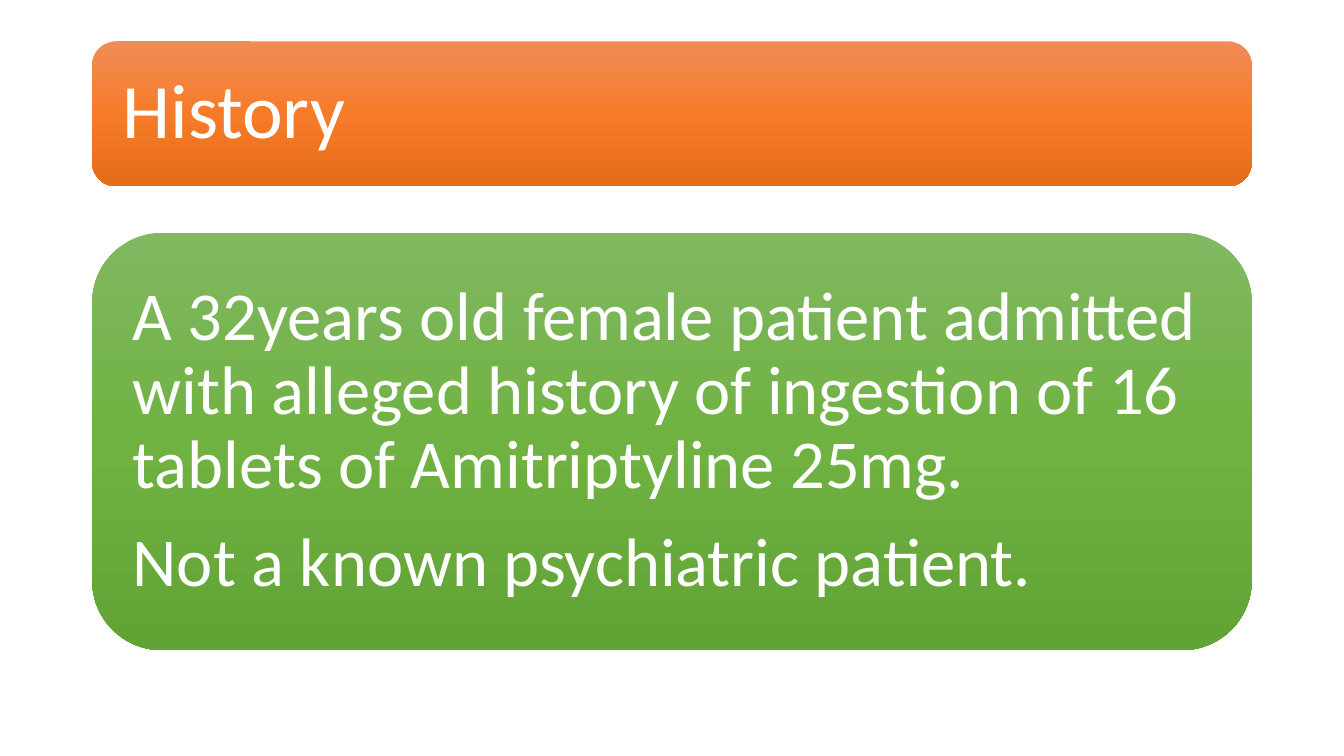
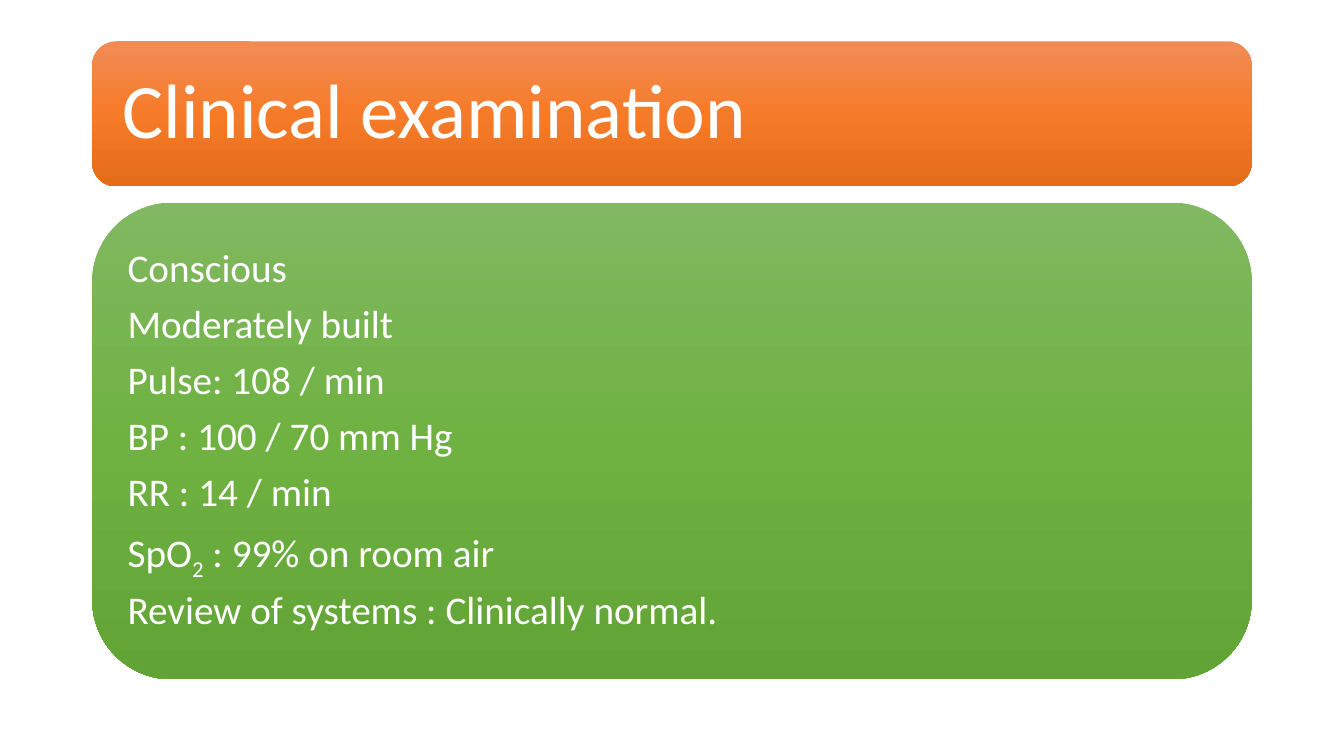
import copy
from dataclasses import dataclass

import pptx
import pptx.dml.color
import pptx.enum.shapes
import pptx.enum.text
import pptx.oxml.ns
import pptx.util

Inches = pptx.util.Inches
Pt = pptx.util.Pt


@dataclass(frozen=True)
class Theme:
    font: str = "Calibri"
    text_color: str = "FFFFFF"
    title_gradient: tuple = ("F18C57", "F67B28", "E56C19")
    body_gradient: tuple = ("81B861", "6FB242", "62A336")
    title_size: float = 55
    history_size: float = 49
    findings_size: float = 28
    line_spacing: float = 0.9
    space_after: float = 0.35  # share of the type size
    page_width: float = 13.33
    page_height: float = 7.5
    panel_width: float = 11.5


THEME = Theme()


def rgb(color):
    return pptx.dml.color.RGBColor.from_string(color)


# Vertical gradient with evenly spaced stops
def fill_gradient(shape, colors):
    fill = shape.fill
    fill.gradient()
    fill.gradient_angle = 270
    stop_list = shape._element.spPr.find(".//" + pptx.oxml.ns.qn("a:gsLst"))
    while len(stop_list) < len(colors):
        stop_list.append(copy.deepcopy(stop_list[0]))
    for index, (stop, color) in enumerate(zip(fill.gradient_stops, colors)):
        stop.position = index / (len(colors) - 1)
        stop.color.rgb = rgb(color)


# A paragraph is a list of spans; every second span is a subscript
def add_spans(para, spans, size):
    para.alignment = pptx.enum.text.PP_ALIGN.LEFT
    para.line_spacing = THEME.line_spacing
    para.space_after = Pt(size * THEME.space_after)
    for index, text in enumerate(spans):
        span = para.add_run()
        span.text = text
        span.font.name = THEME.font
        span.font.size = Pt(size)
        span.font.color.rgb = rgb(THEME.text_color)
        if index % 2:
            span.font._element.set("baseline", "-25000")


# Centred rounded panel; its corners add to the text inset
def add_panel(page, top, height, colors, paragraphs, size, inset):
    left = (THEME.page_width - THEME.panel_width) / 2
    panel = page.shapes.add_shape(
        pptx.enum.shapes.MSO_SHAPE.ROUNDED_RECTANGLE,
        Inches(left), Inches(top), Inches(THEME.panel_width), Inches(height))
    panel.shadow.inherit = False
    panel.line.fill.background()
    fill_gradient(panel, colors)
    frame = panel.text_frame
    frame.word_wrap = True
    frame.vertical_anchor = pptx.enum.text.MSO_ANCHOR.MIDDLE
    frame.margin_left = frame.margin_right = Inches(inset)
    frame.margin_top = frame.margin_bottom = Inches(inset)
    for index, spans in enumerate(paragraphs):
        para = frame.add_paragraph() if index else frame.paragraphs[0]
        add_spans(para, spans, size)


# Title band and body panel of one slide
def add_page(deck, title, paragraphs, top, height, size, inset):
    page = deck.slides.add_slide(deck.slide_layouts[6])
    add_panel(page, 0.41, 1.44, THEME.title_gradient, [[title]],
              THEME.title_size, 0.23)
    add_panel(page, top, height, THEME.body_gradient, paragraphs, size, inset)


def main():
    deck = pptx.Presentation()
    deck.slide_width = Inches(THEME.page_width)
    deck.slide_height = Inches(THEME.page_height)

    history = [
        ["A 32years old female patient admitted with alleged history of "
         "ingestion of 16 tablets of Amitriptyline 25mg."],
        ["Not a known psychiatric patient."],
    ]
    add_page(deck, "History", history, top=2.31, height=4.14,
             size=THEME.history_size, inset=0.2)

    findings = [
        ["Conscious"],
        ["Moderately built"],
        ["Pulse: 108 / min"],
        ["BP : 100 / 70 mm Hg"],
        ["RR : 14 / min"],
        ["SpO", "2", " : 99% on room air"],
        ["Review of systems : Clinically normal."],
    ]
    add_page(deck, "Clinical examination", findings, top=2.01, height=4.73,
             size=THEME.findings_size, inset=0.12)

    deck.save("out.pptx")


if __name__ == "__main__":
    main()
